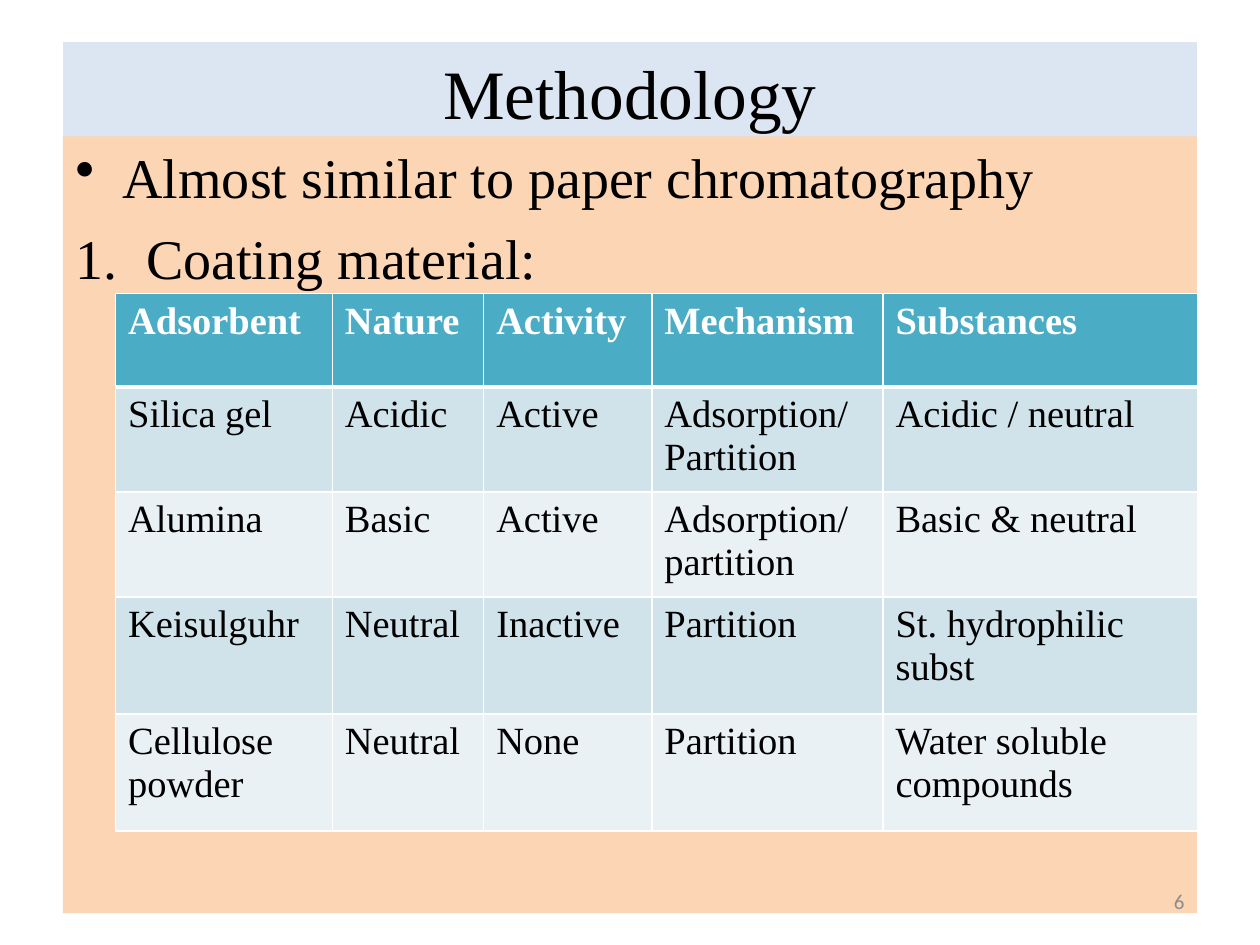
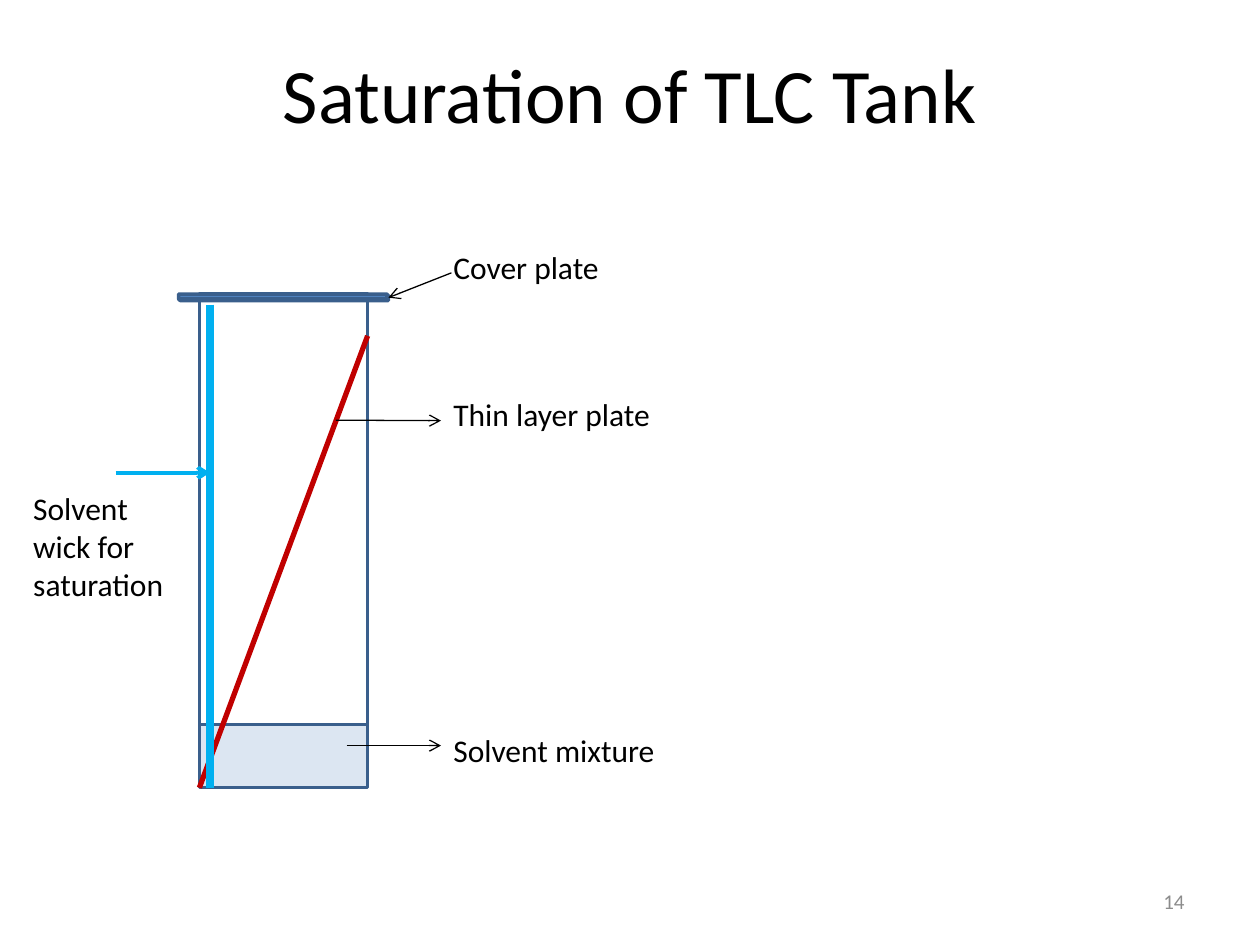
from pptx import Presentation, util as u
from pptx.dml.color import RGBColor
from pptx.enum import shapes, text
from pptx.oxml import parse_xml
from pptx.oxml.ns import nsdecls, qn
from lxml import etree

Cm, Pt = u.Cm, u.Pt
HUES = {
    "ink": "000000", "white": "FFFFFF", "pale": "DCE6F2", "peach": "FCD5B5",
    "head": "4BACC6", "odd": "D0E3EA", "even": "E9F1F5", "page": "8C8C8C",
    "edge": "3A5F8C", "lid": "4F81BD", "plate": "C00000", "wick": "00B0F0",
}
RGB = {name: RGBColor.from_string(code) for name, code in HUES.items()}
SERIF, SANS = "Times New Roman", "Calibri"
ALIGN, ANCHOR = text.PP_ALIGN, text.MSO_ANCHOR


def write(frame, words, size=18, face=SANS, hue="ink", bold=False,
          align=ALIGN.LEFT, anchor=ANCHOR.TOP, marks=(), gap=0):
    frame.word_wrap = True
    frame.vertical_anchor = anchor
    for i, line in enumerate(words.split("\n")):
        para = frame.paragraphs[0] if i == 0 else frame.add_paragraph()
        if marks:
            tag, key, value, dent = marks[i]
            props = para._p.get_or_add_pPr()
            props.set("marL", str(Cm(dent)))
            props.set("indent", str(-Cm(dent)))
            etree.SubElement(props, qn(tag)).set(key, value)
        para.alignment = align
        para.space_before = Pt(gap if i else 0)
        run = para.add_run()
        run.text = line
        font = run.font
        font.name, font.size, font.bold = face, Pt(size), bold
        font.color.rgb = RGB[hue]


def draw(slide, start, end, hue, width, arrow=True):
    line = slide.shapes.add_connector(
        shapes.MSO_CONNECTOR.STRAIGHT, *[Cm(n) for n in start + end])
    line.line.color.rgb = RGB[hue]
    line.line.width = Pt(width)
    if arrow:
        etree.SubElement(line.line._get_or_add_ln(), qn("a:tailEnd")).set("type", "arrow")
    etree.SubElement(line._element.spPr, qn("a:effectLst"))


deck = Presentation()
deck.slide_width, deck.slide_height = Cm(25.4), Cm(19.05)

pages = []
for name, page, top, high, size, face in [
    ("Methodology", "6", 0.85, 2.02, 39.6, SERIF),
    ("Saturation of TLC Tank", "14", 0.64, 2.46, 44, SANS),
]:
    slide = deck.slides.add_slide(deck.slide_layouts[5])
    title = slide.shapes.title
    title.left, title.top, title.width, title.height = Cm(1.27), Cm(top), Cm(22.86), Cm(high)
    write(title.text_frame, name, size=size, face=face,
          align=ALIGN.CENTER, anchor=ANCHOR.MIDDLE)
    pages.append((slide, page))

slide = pages[0][0]
title = slide.shapes.title
title.fill.solid()
title.fill.fore_color.rgb = RGB["pale"]
body = slide.shapes.add_textbox(Cm(1.27), Cm(2.75), Cm(22.86), Cm(15.66))
body.fill.solid()
body.fill.fore_color.rgb = RGB["peach"]
write(body.text_frame, "Almost similar to paper chromatography\nCoating material:",
      size=32, face=SERIF, gap=8,
      marks=[("a:buChar", "char", "•", 0.95), ("a:buAutoNum", "type", "arabicPeriod", 1.43)])

ROWS = [
    ["Adsorbent", "Nature", "Activity", "Mechanism", "Substances"],
    ["Silica gel", "Acidic", "Active", "Adsorption/ Partition", "Acidic / neutral"],
    ["Alumina", "Basic", "Active", "Adsorption/ partition", "Basic & neutral"],
    ["Keisulguhr", "Neutral", "Inactive", "Partition", "St. hydrophilic subst"],
    ["Cellulose powder", "Neutral", "None", "Partition", "Water soluble compounds"],
]
WIDE = [4.37, 3.05, 3.39, 4.66, 6.35]
HIGH = [1.88, 1.88, 1.88, 2.36, 2.36]
grid = slide.shapes.add_table(
    len(ROWS), len(WIDE), Cm(2.33), Cm(5.92), Cm(sum(WIDE)), Cm(sum(HIGH))).table
for col, wide in zip(grid.columns, WIDE):
    col.width = Cm(wide)
for r, (row, high) in enumerate(zip(ROWS, HIGH)):
    grid.rows[r].height = Cm(high)
    for c, words in enumerate(row):
        cell = grid.cell(r, c)
        write(cell.text_frame, words, size=22, face=SERIF,
              hue="ink" if r else "white", bold=r == 0)
        props = cell._tc.get_or_add_tcPr()
        for side in "LRTB":
            thick = 3 if (r, side) in [(0, "B"), (1, "T")] else 1
            props.append(parse_xml(
                f'<a:ln{side} {nsdecls("a")} w="{Pt(thick)}"><a:solidFill>'
                f'<a:srgbClr val="{HUES["white"]}"/></a:solidFill></a:ln{side}>'))
        cell.fill.solid()
        cell.fill.fore_color.rgb = RGB["head" if r == 0 else "odd" if r % 2 else "even"]

slide = pages[1][0]
BOX, CUBE = shapes.MSO_SHAPE.RECTANGLE, shapes.MSO_SHAPE.CUBE
parts = []
for kind, hue, *spot in [
    (BOX, "white", 4.02, 5.93, 3.39, 8.68),
    (BOX, "pale", 4.02, 14.61, 3.39, 1.27),
    (CUBE, "lid", 3.6, 5.93, 4.23, 0.13),
]:
    part = slide.shapes.add_shape(kind, *[Cm(n) for n in spot])
    part.shadow.inherit = False
    part.fill.solid()
    part.fill.fore_color.rgb = RGB[hue]
    part.line.color.rgb = RGB["edge"]
    part.line.width = Pt(2)
    parts.append(part)
parts[-1]._element.spPr.xfrm.set("flipV", "1")

draw(slide, (4.02, 15.88), (7.41, 6.77), "plate", 3, arrow=False)
draw(slide, (4.23, 6.14), (4.23, 15.88), "wick", 4.5, arrow=False)
draw(slide, (2.33, 9.53), (4.23, 9.53), "wick", 2.25)
for start, end in [
    ((9.1, 5.5), (7.83, 6)),
    ((6.77, 8.47), (8.89, 8.48)),
    ((6.99, 15.03), (8.89, 15.03)),
]:
    draw(slide, start, end, "ink", 0.75)

for words, *spot in [
    ("Cover plate", 8.89, 4.87, 4.23, 1.03),
    ("Thin layer plate", 8.89, 7.83, 4.66, 1.03),
    ("Solvent mixture", 8.89, 14.61, 4.66, 1.03),
    ("Solvent wick for saturation", 0.42, 9.74, 3.6, 2.56),
]:
    write(slide.shapes.add_textbox(*[Cm(n) for n in spot]).text_frame, words)

for slide, page in pages:
    foot = slide.shapes.add_textbox(Cm(18.2), Cm(17.66), Cm(5.93), Cm(1.01))
    write(foot.text_frame, page, size=12, hue="page",
          align=ALIGN.RIGHT, anchor=ANCHOR.MIDDLE)

deck.save("out.pptx")
